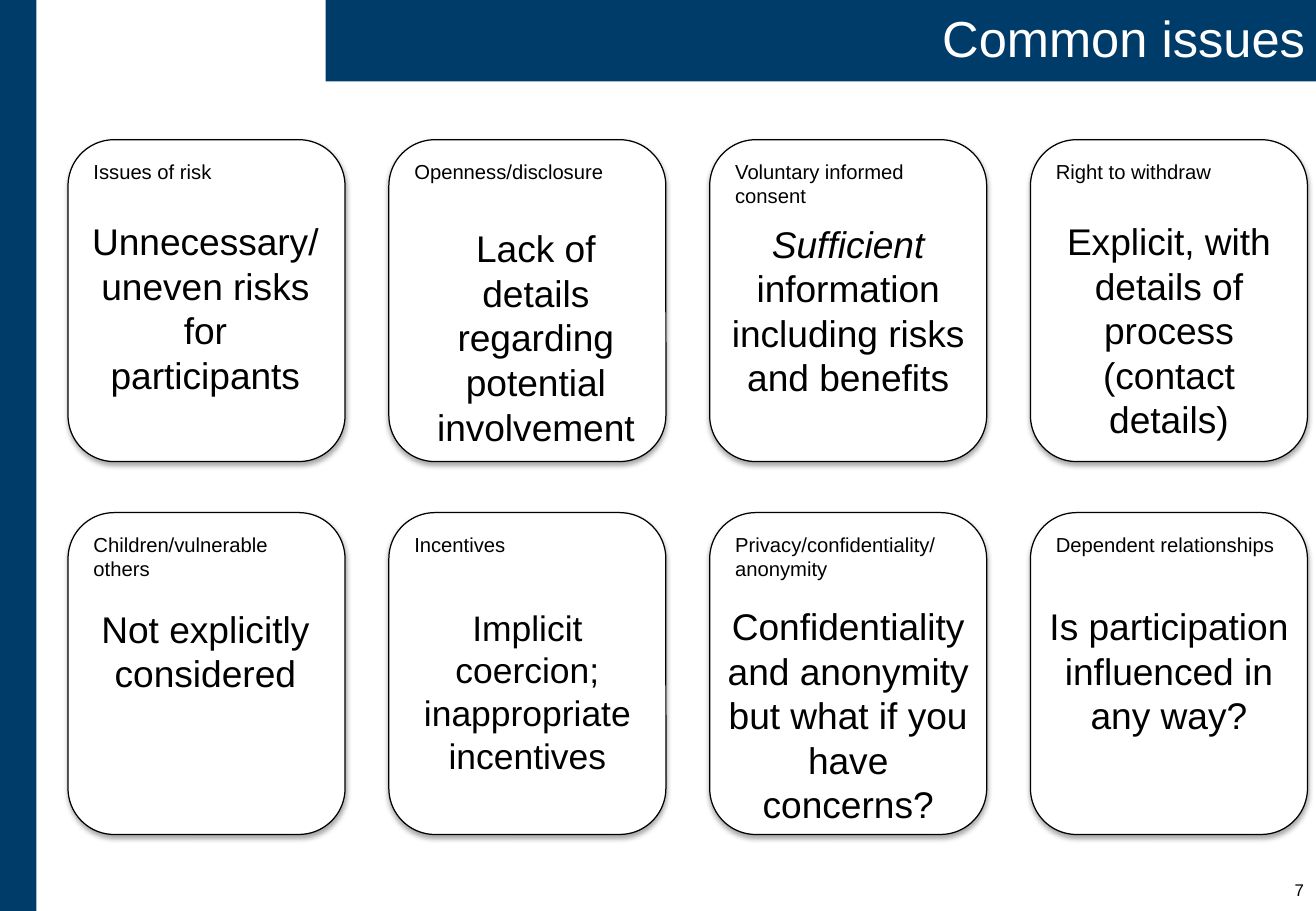
"""Build the slide of common ethical issues as a grid of titled cards."""
import lxml.etree
import pptx
import pptx.dml.color
import pptx.enum.shapes
import pptx.enum.text
import pptx.oxml.ns
import pptx.util

Inches = pptx.util.Inches
ALIGN = pptx.enum.text.PP_ALIGN
ANCHOR = pptx.enum.text.MSO_ANCHOR
SHAPE = pptx.enum.shapes.MSO_SHAPE

COLOURS = {"navy": "003C69", "white": "FFFFFF", "black": "000000"}
FORMATS = {
    "title": {"name": "Arial", "size": pptx.util.Pt(30)},
    "heading": {"name": "Arial", "size": pptx.util.Pt(12)},
    "body": {"name": "Arial", "size": pptx.util.Pt(22)},
    "small body": {"name": "Arial", "size": pptx.util.Pt(21)},
    "number": {"name": "Arial", "size": pptx.util.Pt(10)},
}
CARD_LEFT, CARD_TOP = 0.56, 1.15
CARD_WIDTH, CARD_HEIGHT = 2.28, 2.65
COLUMN_STEP, ROW_STEP = 2.64, 3.07
COLUMNS = 4

ISSUES = [
    ("Issues of risk", [("Unnecessary/uneven risks for participants", False)],
     (0.63, 1.75, 2.12, 1.58), "body"),
    ("Openness/disclosure", [("Lack of details regarding potential involvement", False)],
     (3.35, 1.81, 2.12, 1.95), "body"),
    ("Voluntary informed consent",
     [("Sufficient", True), (" information including risks and benefits", False)],
     (5.92, 1.77, 2.12, 1.58), "body"),
    ("Right to withdraw", [("Explicit, with details of process (contact details)", False)],
     (8.56, 1.75, 2.12, 1.95), "body"),
    ("Children/vulnerable others", [("Not explicitly considered", False)],
     (0.63, 4.94, 2.12, 0.84), "body"),
    ("Incentives", [("Implicit coercion; inappropriate incentives", False)],
     (3.2, 4.94, 2.28, 1.51), "small body"),
    ("Privacy/confidentiality/anonymity",
     [("Confidentiality and anonymity but what if you have concerns?", False)],
     (5.84, 4.92, 2.28, 1.95), "body"),
    ("Dependent relationships", [("Is participation influenced in any way?", False)],
     (8.48, 4.92, 2.28, 1.21), "body"),
]


def colour(name):
    """Return the named colour."""
    return pptx.dml.color.RGBColor.from_string(COLOURS[name])


def write_text(shape, runs, style, alignment, font_colour="black", anchor=ANCHOR.TOP):
    """Write runs of (text, italic) as the one paragraph of a shape."""
    frame = shape.text_frame
    frame.word_wrap = True
    frame.vertical_anchor = anchor
    paragraph = frame.paragraphs[0]
    paragraph.alignment = alignment
    for text, italic in runs:
        run = paragraph.add_run()
        run.text = text
        for attribute, value in {**FORMATS[style], "italic": italic}.items():
            setattr(run.font, attribute, value)
        run.font.color.rgb = colour(font_colour)
    return paragraph


def add_block(slide, kind, box, fill):
    """Add a filled preset shape with neither line nor shadow."""
    shape = slide.shapes.add_shape(kind, *map(Inches, box))
    shape.shadow.inherit = False
    shape.fill.solid()
    shape.fill.fore_color.rgb = colour(fill)
    shape.line.fill.background()
    return shape


def add_soft_shadow(shape):
    """Give a shape a soft shadow straight below it."""
    qualified = pptx.oxml.ns.qn
    effects = shape._element.spPr.find(qualified("a:effectLst"))
    shadow = lxml.etree.SubElement(
        effects, qualified("a:outerShdw"), blurRad="40000", dist="23000",
        dir="5400000", rotWithShape="0")
    shade = lxml.etree.SubElement(shadow, qualified("a:srgbClr"), val=COLOURS["black"])
    lxml.etree.SubElement(shade, qualified("a:alpha"), val="35000")


def add_title(slide, text):
    """Add the title band."""
    band = add_block(slide, SHAPE.RECTANGLE, (2.68, 0, 8.16, 0.67), "navy")
    margins = {"margin_left": 0.08, "margin_top": 0.04,
               "margin_right": 0.1, "margin_bottom": 0.04}
    for attribute, value in margins.items():
        setattr(band.text_frame, attribute, Inches(value))
    paragraph = write_text(band, [(text, False)], "title", ALIGN.RIGHT, "white", ANCHOR.MIDDLE)
    paragraph.line_spacing = 0.9


def add_card(slide, index, heading):
    """Add an outlined card at its place in the grid."""
    row, column = divmod(index, COLUMNS)
    box = (CARD_LEFT + column * COLUMN_STEP, CARD_TOP + row * ROW_STEP,
           CARD_WIDTH, CARD_HEIGHT)
    card = add_block(slide, SHAPE.ROUNDED_RECTANGLE, box, "white")
    card.line.color.rgb = colour("black")
    card.line.width = pptx.util.Pt(0.75)
    add_soft_shadow(card)
    write_text(card, [(heading, False)], "heading", ALIGN.LEFT)


def add_label(slide, box, runs, style, alignment):
    """Add a text box."""
    label = slide.shapes.add_textbox(*map(Inches, box))
    write_text(label, runs, style, alignment)


def main():
    """Build and save the slide."""
    presentation = pptx.Presentation()
    presentation.slide_width = Inches(10.83)
    presentation.slide_height = Inches(7.5)
    slide = presentation.slides.add_slide(presentation.slide_layouts[6])
    add_block(slide, SHAPE.RECTANGLE, (0, 0, 0.3, 7.5), "navy")
    add_title(slide, "Common issues")
    for index, (heading, runs, box, style) in enumerate(ISSUES):
        add_card(slide, index, heading)
        add_label(slide, box, runs, style, ALIGN.CENTER)
    add_label(slide, (9.96, 7.19, 0.87, 0.31), [("7", False)], "number", ALIGN.RIGHT)
    presentation.save("out.pptx")


if __name__ == "__main__":
    main()
